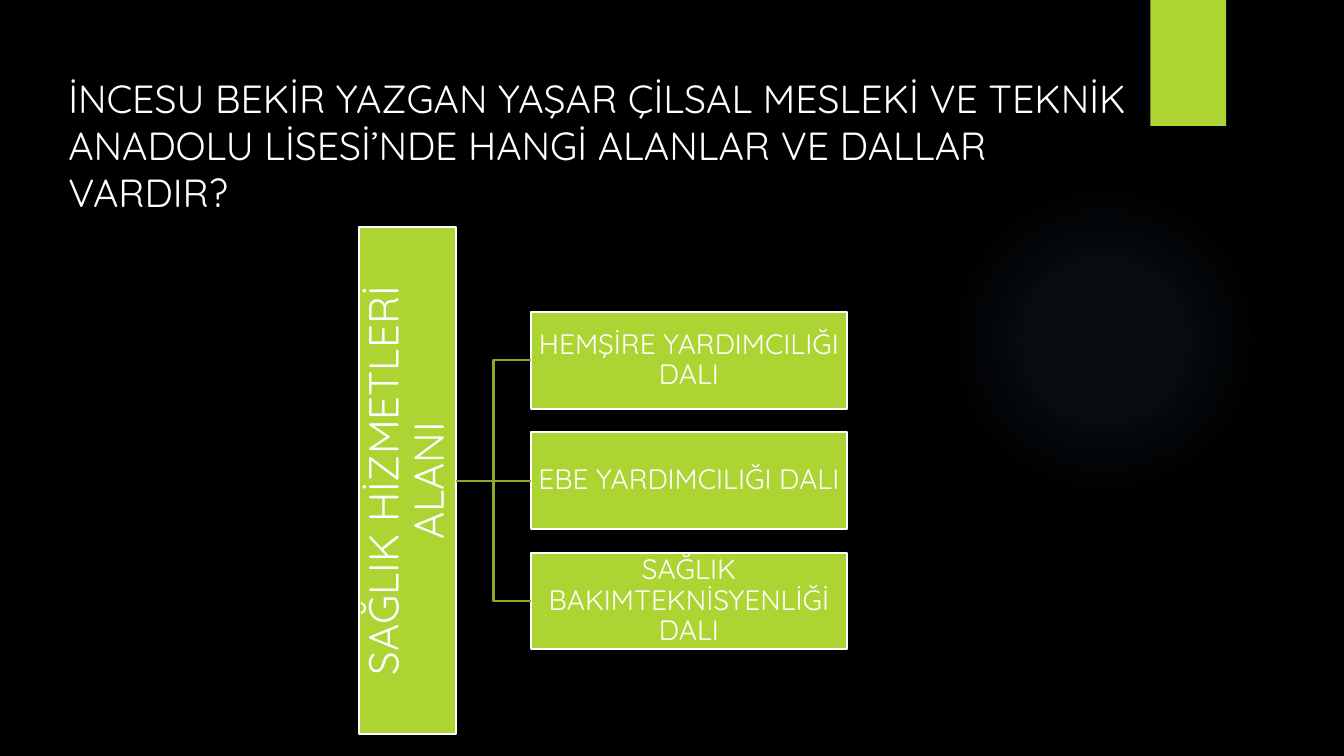
from dataclasses import dataclass

from lxml import etree
from pptx import Presentation
from pptx.dml.color import RGBColor
from pptx.enum import shapes, text
from pptx.oxml import ns
from pptx.util import Pt

COLORS = {
    "background": "000000",
    "accent": "ACD433",
    "connector": "8AAA29",
    "glow": "7AC4F0",
    "light": "FFFFFF",
}
FONT = "Quicksand"
LINE_WIDTH = 1.5

CENTER_Y = 343.4
NODE_SIZE = 69
BRANCH_LEFT, BRANCH_WIDTH, BRANCH_PITCH = 379.4, 225.5, 85.9
BRANCH_NAMES = [
    "HEMŞİRE YARDIMCILIĞI DALI",
    "EBE YARDIMCILIĞI DALI",
    "SAĞLIK BAKIMTEKNİSYENLİĞİ DALI",
]


@dataclass
class Node:
    label: str
    left: float
    center_y: float
    width: float
    height: float
    font_size: float
    inset: float
    upward: bool = False


def color(name: str) -> RGBColor:
    return RGBColor.from_string(COLORS[name])


def style_font(paragraph, size: float) -> None:
    for run in paragraph.runs:
        run.font.name = FONT
        run.font.size = Pt(size)
        run.font.color.rgb = color("light")


def add_plain_shape(slide, kind, left: float, top: float, width: float, height: float):
    """Add an accent-filled shape without outline or shadow."""
    shape = slide.shapes.add_shape(kind, Pt(left), Pt(top), Pt(width), Pt(height))
    shape.shadow.inherit = False
    shape.fill.solid()
    shape.fill.fore_color.rgb = color("accent")
    shape.line.fill.background()
    return shape


def add_glow(slide) -> None:
    """Add the faint round light that fades out towards its rim."""
    shape = add_plain_shape(slide, shapes.MSO_SHAPE.OVAL, 677.5, 131.8, 221.8, 221.8)
    gradient = etree.Element(ns.qn("a:gradFill"), rotWithShape="1")
    stops = etree.SubElement(gradient, ns.qn("a:gsLst"))
    for position, opacity in [(0, 7), (36, 6), (69, 0)]:
        stop = etree.SubElement(stops, ns.qn("a:gs"), pos=str(position * 1000))
        tint = etree.SubElement(stop, ns.qn("a:srgbClr"), val=COLORS["glow"])
        etree.SubElement(tint, ns.qn("a:alpha"), val=str(opacity * 1000))
    circle = etree.SubElement(gradient, ns.qn("a:path"), path="circle")
    etree.SubElement(circle, ns.qn("a:fillToRect"), l="50000", t="50000", r="50000", b="50000")
    properties = shape.element.spPr
    properties.replace(properties.find(ns.qn("a:solidFill")), gradient)


def add_title(slide, title: str) -> None:
    box = slide.shapes.add_textbox(Pt(41.8), Pt(49.7), Pt(782.6), Pt(108.7))
    box.text_frame.word_wrap = True
    box.text_frame.text = title
    style_font(box.text_frame.paragraphs[0], 28)


def add_node(slide, node: Node):
    shape = add_plain_shape(slide, shapes.MSO_SHAPE.RECTANGLE, node.left,
                            node.center_y - node.height / 2, node.width, node.height)
    shape.line.color.rgb = color("light")
    shape.line.width = Pt(LINE_WIDTH)
    frame = shape.text_frame
    frame.text = node.label
    frame.word_wrap = True
    frame.vertical_anchor = text.MSO_ANCHOR.MIDDLE
    frame.margin_left = frame.margin_right = Pt(node.inset)
    frame.margin_top = frame.margin_bottom = Pt(node.inset)
    if node.upward:
        shape.element.txBody.find(ns.qn("a:bodyPr")).set("vert", "vert270")
    paragraph = frame.paragraphs[0]
    paragraph.alignment = text.PP_ALIGN.CENTER
    paragraph.line_spacing = 0.9
    style_font(paragraph, node.font_size)
    return shape


def connect(slide, root, branch, kind) -> None:
    """Join the right side of the root to the left side of a branch."""
    connector = slide.shapes.add_connector(kind, 0, 0, 0, 0)
    connector.begin_connect(root, 3)
    connector.end_connect(branch, 1)
    connector.line.color.rgb = color("connector")
    connector.line.width = Pt(LINE_WIDTH)
    etree.SubElement(connector.element.spPr, ns.qn("a:effectLst"))


def main() -> None:
    presentation = Presentation()
    presentation.slide_width, presentation.slide_height = Pt(960), Pt(540)
    slide = presentation.slides.add_slide(presentation.slide_layouts[6])
    slide.background.fill.solid()
    slide.background.fill.fore_color.rgb = color("background")

    add_glow(slide)
    add_plain_shape(slide, shapes.MSO_SHAPE.RECTANGLE, 821.8, 0, 54, 90)

    root = add_node(slide, Node("SAĞLIK HİZMETLERİ ALANI", 256.7, CENTER_Y,
                                NODE_SIZE, 362.2, 30, 1.5, upward=True))
    middle = len(BRANCH_NAMES) // 2
    for index, name in enumerate(BRANCH_NAMES):
        center_y = CENTER_Y + (index - middle) * BRANCH_PITCH
        branch = add_node(slide, Node(name, BRANCH_LEFT, center_y,
                                      BRANCH_WIDTH, NODE_SIZE, 20, 1))
        straight = index == middle
        connect(slide, root, branch,
                shapes.MSO_CONNECTOR.STRAIGHT if straight else shapes.MSO_CONNECTOR.ELBOW)

    add_title(slide, "İNCESU BEKİR YAZGAN YAŞAR ÇİLSAL MESLEKİ VE TEKNİK ANADOLU "
                     "LİSESİ’NDE HANGİ ALANLAR VE DALLAR VARDIR?")
    presentation.save("out.pptx")


if __name__ == "__main__":
    main()
